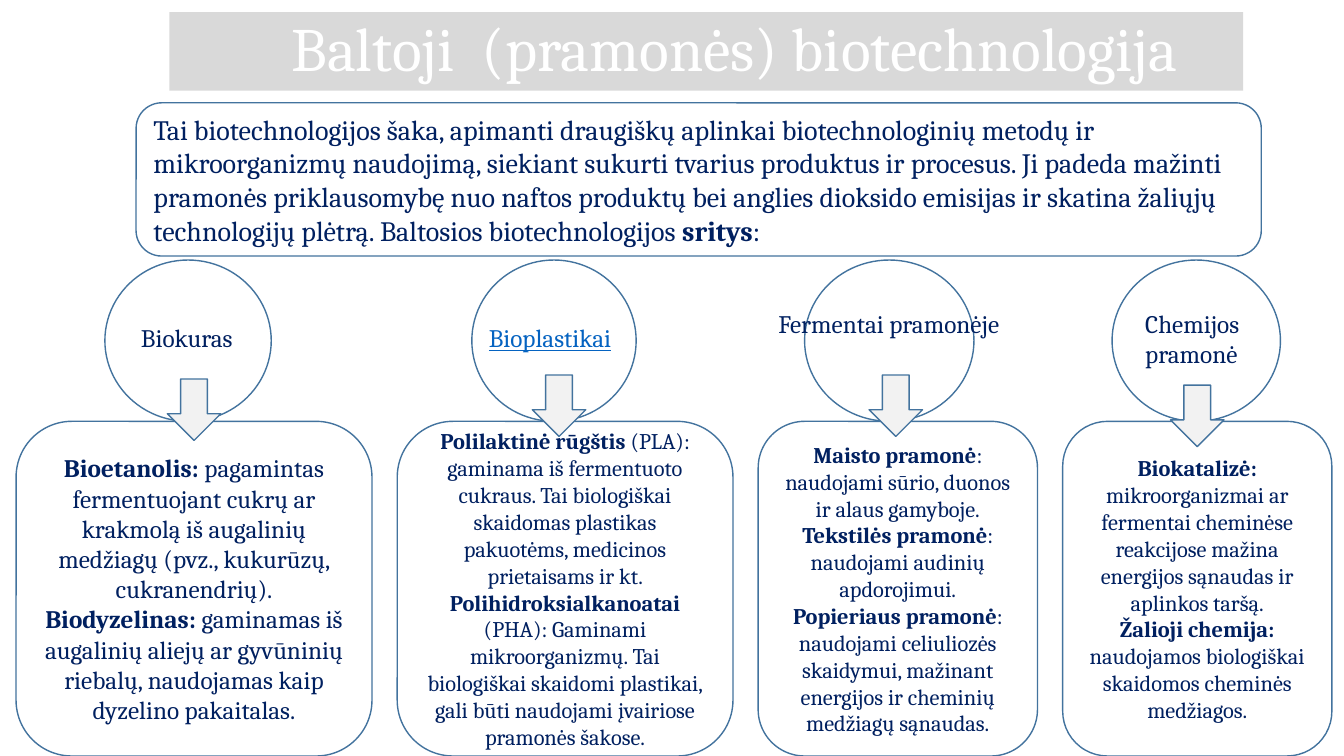
"""Build a slide on white (industrial) biotechnology and its four fields."""
import pptx
import pptx.dml.color
import pptx.enum.shapes
import pptx.enum.text
import pptx.util

Inches = pptx.util.Inches
Kind = pptx.enum.shapes.MSO_SHAPE
Align = pptx.enum.text.PP_ALIGN
Anchor = pptx.enum.text.MSO_ANCHOR
NAVY, BLUE, WHITE, LINK = "002060", "43739E", "FFFFFF", "0563C1"


def paint(fill, color):
    fill.solid()
    fill.fore_color.rgb = pptx.dml.color.RGBColor.from_string(color)


def draw(text, box, kind=None, fill=WHITE, line=BLUE, size=18, color=NAVY,
         align=Align.LEFT, under=False, inset=0.1, space=1.0):
    """Add a shape or text box; asterisks in the text switch bold on and off."""
    place = [Inches(n) for n in box]
    if kind is None:
        shape = slide.shapes.add_textbox(*place)
    else:
        shape = slide.shapes.add_shape(kind, *place)
        shape.shadow.inherit = False
        paint(shape.fill, fill)
        if line:
            paint(shape.line.fill, line)
            shape.line.width = pptx.util.Pt(1)
        else:
            shape.line.fill.background()
    frame = shape.text_frame
    frame.word_wrap = True
    frame.margin_left = Inches(inset)
    frame.vertical_anchor = Anchor.MIDDLE if kind else Anchor.TOP
    for row, words in enumerate(text.split("\n") if text else []):
        para = frame.add_paragraph() if row else frame.paragraphs[0]
        para.alignment = align
        para.line_spacing = space
        for part, piece in enumerate(words.split("*")):
            if piece:
                run = para.add_run()
                run.text = piece
                run.font.name = "Cambria"
                run.font.size = pptx.util.Pt(size)
                run.font.bold = part % 2 == 1
                run.font.underline = under
                paint(run.font.fill, color)


deck = pptx.Presentation()
deck.slide_width, deck.slide_height = Inches(13.33), Inches(7.5)
slide = deck.slides.add_slide(deck.slide_layouts[6])

draw("Baltoji  (pramonės) biotechnologija", (1.68, 0.12, 10.65, 0.78),
     Kind.RECTANGLE, fill="D9D9D9", line=None, size=44, color=WHITE,
     inset=1.21, space=0.9)

fields = [
    {"ring": (1.04, 1.65), "card": (0.16, 3.53), "arrow": (1.66, 3.76), "size": 18,
     "name": "Biokuras", "label": (1.3, 3.15, 1.3, 0.4), "style": {},
     "text": "*Bioetanolis: *pagamintas fermentuojant cukrų ar krakmolą iš "
             "augalinių medžiagų (pvz., kukurūzų, cukranendrių).\n"
             "*Biodyzelinas: *gaminamas iš augalinių aliejų ar gyvūninių "
             "riebalų, naudojamas kaip dyzelino pakaitalas."},
    {"ring": (4.68, 1.63), "card": (3.94, 3.33), "arrow": (5.28, 3.72), "size": 16,
     "name": "Bioplastikai", "label": (4.75, 3.15, 1.48, 0.4),
     "style": {"color": LINK, "under": True},
     "text": "*Polilaktinė rūgštis *(PLA): gaminama iš fermentuoto cukraus. "
             "Tai biologiškai skaidomas plastikas pakuotėms, medicinos "
             "prietaisams ir kt. *Polihidroksialkanoatai *(PHA): Gaminami "
             "mikroorganizmų. Tai biologiškai skaidomi plastikai, gali būti "
             "naudojami įvairiose pramonės šakose."},
    {"ring": (7.98, 1.68), "card": (7.52, 2.77), "arrow": (8.62, 3.72), "size": 16,
     "name": "Fermentai pramonėje", "label": (7.57, 3.01, 2.49, 0.71),
     "style": {"align": Align.CENTER},
     "text": "*Maisto pramonė*: naudojami sūrio, duonos ir alaus gamyboje.\n"
             "*Tekstilės pramonė*: naudojami audinių apdorojimui.\n"
             "*Popieriaus pramonė*: naudojami celiuliozės skaidymui, mažinant "
             "energijos ir cheminių medžiagų sąnaudas."},
    {"ring": (11.03, 1.67), "card": (10.54, 2.67), "arrow": (11.61, 3.82), "size": 16,
     "name": "Chemijos pramonė", "label": (11.26, 3.01, 1.81, 0.71), "style": {},
     "text": "*Biokatalizė: *mikroorganizmai ar fermentai cheminėse reakcijose "
             "mažina energijos sąnaudas ir aplinkos taršą.\n"
             "*Žalioji chemija: *naudojamos biologiškai skaidomos cheminės "
             "medžiagos."},
]
for field in fields:
    left, width = field["ring"]
    draw("", (left, 2.58, width, 1.6), Kind.OVAL)
    left, width = field["card"]
    draw(field["text"], (left, 4.18, width, 3.32), Kind.ROUNDED_RECTANGLE,
         size=field["size"], align=Align.CENTER)
    draw("", (*field["arrow"], 0.53, 0.61), Kind.DOWN_ARROW, fill="F2F2F2")
    draw(field["name"], field["label"], **field["style"])

draw("Tai biotechnologijos šaka, apimanti draugiškų aplinkai biotechnologinių "
     "metodų ir mikroorganizmų naudojimą, siekiant sukurti tvarius produktus ir "
     "procesus. Ji padeda mažinti pramonės priklausomybę nuo naftos produktų bei "
     "anglies dioksido emisijas ir skatina žaliųjų technologijų plėtrą. "
     "Baltosios biotechnologijos *sritys*:",
     (1.35, 1.02, 11.16, 1.52), Kind.ROUNDED_RECTANGLE, size=20)

deck.save("out.pptx")
